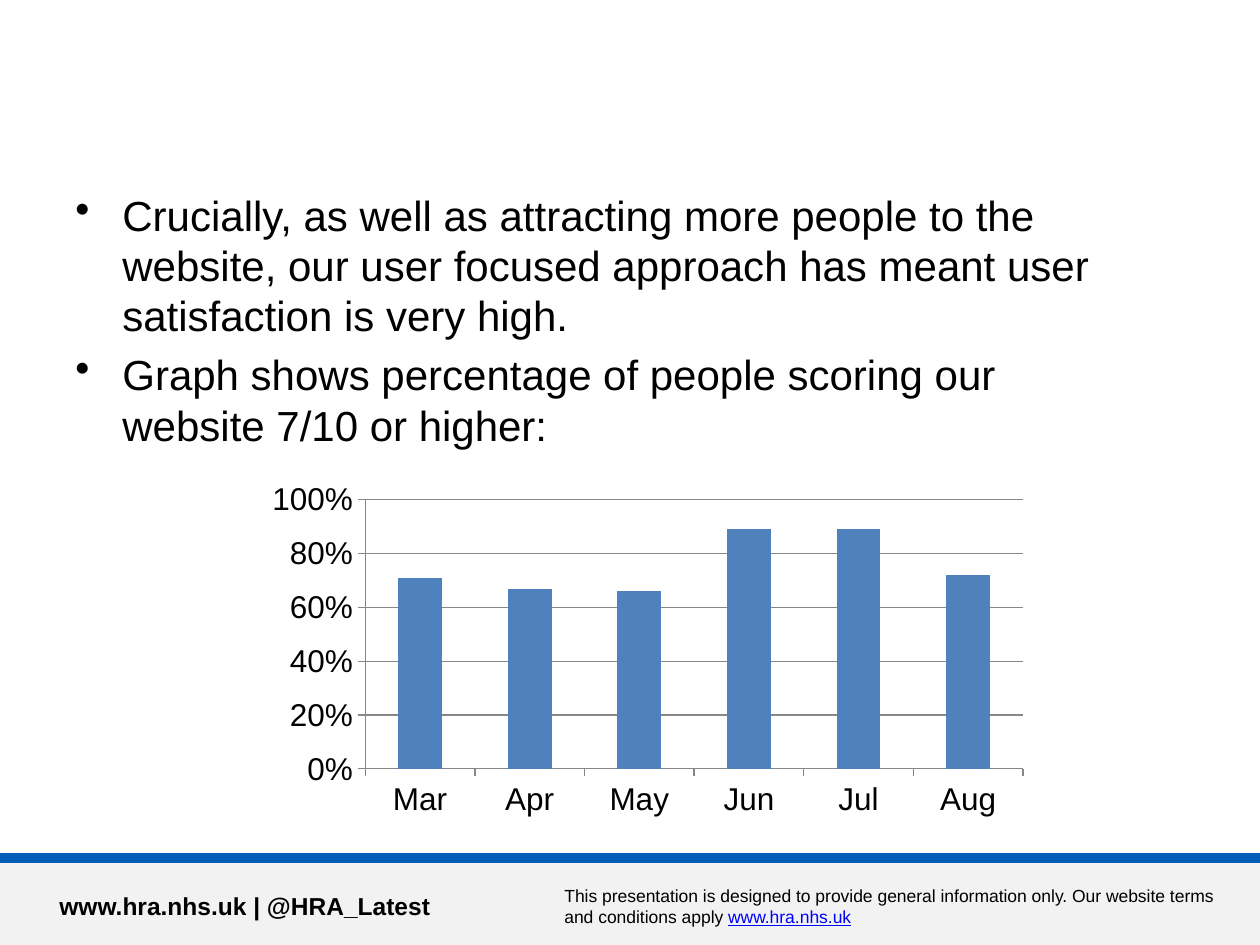
import pptx
import pptx.chart.data
import pptx.dml.color
import pptx.enum.chart
import pptx.enum.shapes
import pptx.enum.text
import pptx.oxml
import pptx.oxml.ns
import pptx.util
from dataclasses import dataclass
from lxml import etree

PX = 914400 / 126  # EMU in one px
BLANK_LAYOUT = 6


@dataclass(frozen=True)
class Theme:
    font: str = "Arial"
    text: str = "000000"
    link: str = "0000FF"
    band: str = "F2F2F2"
    rule: str = "005EB8"
    bar: str = "4F81BD"
    axis: str = "878787"
    body_size: int = 24
    chart_size: int = 18
    contact_size: int = 14
    terms_size: int = 10


THEME = Theme()


def px(*lengths):
    return [pptx.util.Emu(round(length * PX)) for length in lengths]


def rgb(value):
    return pptx.dml.color.RGBColor.from_string(value)


def add_span(para, text, size, color=THEME.text, bold=False, underline=False):
    span = para.add_run()
    span.text = text
    span.font.name = THEME.font
    span.font.size = pptx.util.Pt(size)
    span.font.color.rgb = rgb(color)
    span.font.bold = bold
    span.font.underline = underline


def add_text_box(page, left, top, width, height):
    box = page.shapes.add_textbox(*px(left, top, width, height))
    box.text_frame.word_wrap = True
    return box.text_frame


def add_bullets(page, bounds, texts):
    frame = add_text_box(page, *bounds)
    for index, text in enumerate(texts):
        para = frame.add_paragraph() if index else frame.paragraphs[0]
        properties = para._p.get_or_add_pPr()
        indent = px(47)[0]
        properties.set("marL", str(indent))
        properties.set("indent", str(-indent))
        bullet = etree.SubElement(properties, pptx.oxml.ns.qn("a:buChar"))
        bullet.set("char", "•")
        if index:
            para.space_before = pptx.util.Pt(0.2 * THEME.body_size)
        add_span(para, text, THEME.body_size)


def add_footer(page):
    # Grey band with a blue rule along its top edge
    top = 858
    band = page.shapes.add_shape(
        pptx.enum.shapes.MSO_SHAPE.RECTANGLE, *px(0, top, 1260, 87))
    band.shadow.inherit = False
    band.fill.solid()
    band.fill.fore_color.rgb = rgb(THEME.band)
    band.line.fill.background()

    rule = page.shapes.add_connector(
        pptx.enum.shapes.MSO_CONNECTOR.STRAIGHT, *px(0, top, 1260, top))
    rule.line.color.rgb = rgb(THEME.rule)
    rule.line.width = pptx.util.Pt(6)
    etree.SubElement(rule._element.spPr, pptx.oxml.ns.qn("a:effectLst"))

    # Contact on the left, terms on the right
    contact = add_text_box(page, 47, 885, 403, 50).paragraphs[0]
    add_span(contact, "www.hra.nhs.uk | @HRA_Latest", THEME.contact_size, bold=True)

    terms = add_text_box(page, 552, 879, 680, 66).paragraphs[0]
    add_span(terms, "This presentation is designed to provide general information "
             "only. Our website terms and conditions apply ", THEME.terms_size)
    add_span(terms, "www.hra.nhs.uk", THEME.terms_size, THEME.link, underline=True)


def set_plot_area(chart, x, y, width, height):
    settings = "".join(
        f'<c:{name} val="{value}"/>' for name, value in (
            ("layoutTarget", "inner"), ("xMode", "edge"), ("yMode", "edge"),
            ("x", x), ("y", y), ("w", width), ("h", height)))
    layout = pptx.oxml.parse_xml(
        f'<c:layout {pptx.oxml.ns.nsdecls("c")}>'
        f"<c:manualLayout>{settings}</c:manualLayout></c:layout>")
    plot_area = chart._chartSpace.chart.plotArea
    for old in plot_area.findall(pptx.oxml.ns.qn("c:layout")):
        plot_area.remove(old)
    plot_area.insert(0, layout)


def add_satisfaction_chart(page, bounds, scores):
    data = pptx.chart.data.CategoryChartData(number_format="0%")
    data.categories = list(scores)
    data.add_series("Series 1", list(scores.values()))
    chart = page.shapes.add_chart(
        pptx.enum.chart.XL_CHART_TYPE.COLUMN_STACKED, *px(*bounds), data).chart
    chart.has_title = False
    chart.has_legend = False
    chart.font.name = THEME.font
    chart.font.size = pptx.util.Pt(THEME.chart_size)
    chart.font.color.rgb = rgb(THEME.text)

    # Columns
    plot = chart.plots[0]
    plot.vary_by_categories = False
    plot.gap_width = 150
    plot.overlap = 100
    fill = plot.series[0].format.fill
    fill.solid()
    fill.fore_color.rgb = rgb(THEME.bar)

    # Axes and gridlines
    values = chart.value_axis
    values.minimum_scale = 0
    values.maximum_scale = 1
    values.major_unit = 0.2
    values.has_major_gridlines = True
    values.tick_labels.number_format = "0%"
    values.tick_labels.number_format_is_linked = False
    for axis in (chart.category_axis, values):
        axis.major_tick_mark = pptx.enum.chart.XL_TICK_MARK.OUTSIDE
    for part in (chart.category_axis, values, values.major_gridlines):
        part.format.line.color.rgb = rgb(THEME.axis)
        part.format.line.width = pptx.util.Pt(0.75)
    set_plot_area(chart, 0.303, 0.087, 0.659, 0.671)


def main():
    deck = pptx.Presentation()
    deck.slide_width, deck.slide_height = px(1260, 945)
    page = deck.slides.add_slide(deck.slide_layouts[BLANK_LAYOUT])

    add_footer(page)
    add_bullets(page, (63, 183, 1080, 570), [
        "Crucially, as well as attracting more people to the website, our user "
        "focused approach has meant user satisfaction is very high.",
        "Graph shows percentage of people scoring our website 7/10 or higher:",
    ])
    add_satisfaction_chart(page, (63, 465, 998, 401), {
        "Mar": 0.71, "Apr": 0.67, "May": 0.66,
        "Jun": 0.89, "Jul": 0.89, "Aug": 0.72,
    })
    deck.save("out.pptx")


if __name__ == "__main__":
    main()
